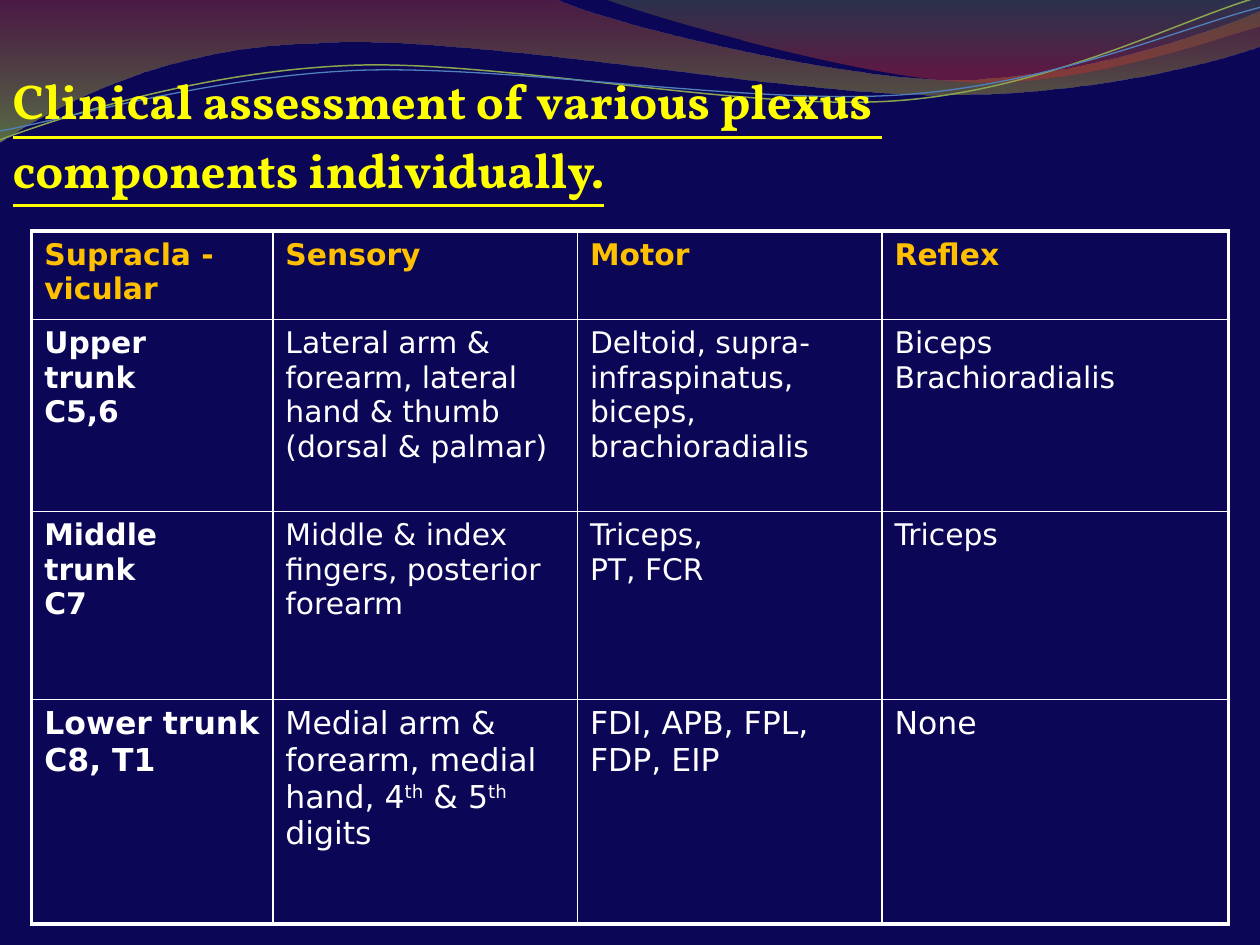
from dataclasses import dataclass

import pptx
import pptx.dml.color
import pptx.enum.text
import pptx.oxml
import pptx.oxml.ns
import pptx.util

Cm = pptx.util.Cm
Pt = pptx.util.Pt
RGB = pptx.dml.color.RGBColor.from_string
A_NS = pptx.oxml.ns.nsdecls("a")
qn = pptx.oxml.ns.qn


@dataclass(frozen=True)
class Theme:
    background: str = "0C0656"
    title: str = "FFFF00"
    header: str = "FFC000"
    body: str = "FFFFFF"
    border: str = "FFFFFF"
    title_font: str = "Vollkorn"
    table_font: str = "DejaVu Sans"
    title_size: float = 28
    title_gap: float = 5.6
    table_size: float = 17
    last_row_size: float = 18
    outer_border: float = 2.25
    inner_border: float = 1


@dataclass(frozen=True)
class GradientStop:
    position: int
    color: str
    opacity: int


@dataclass(frozen=True)
class Wave:
    """Points in cm; a segment of one point is straight, of three a cubic curve."""
    start: tuple
    segments: tuple
    stops: tuple = ()
    line_color: str = ""
    line_width: float = 0


THEME = Theme()

WAVES = (
    Wave((0, 0), (
        ((11.18, -0.03),),
        ((12.09, 0.43), (16.87, 1.6), (19.25, 1.6)),
        ((21.67, 1.6), (24.33, 0.66), (25.4, 0.23)),
        ((25.43, 0.91),),
        ((24.97, 1.12), (22.1, 1.93), (18.95, 1.91)),
        ((15.8, 1.91), (9.7, 0.71), (6.53, 0.86)),
        ((3.28, 0.91), (1.17, 2.11), (-0.03, 2.87)),
    ), stops=(GradientStop(0, "973330", 45), GradientStop(100, "95C238", 55))),
    Wave((12.17, -0.03), (
        ((12.93, 0.28), (17.32, 1.57), (19.53, 1.65)),
        ((21.74, 1.75), (24.41, 0.81), (25.4, 0.53)),
        ((25.4, 0),),
    ), stops=(GradientStop(0, "769537", 30), GradientStop(80, "BE3330", 45))),
    Wave((0, 2.82), (
        ((1.22, 2.36), (4.01, 1.45), (7.04, 1.32)),
        ((10.03, 1.19), (15.06, 2.26), (18.11, 2.03)),
        ((21.16, 1.8), (23.83, 0.38), (25.35, -0.05)),
    ), line_color="89A54F", line_width=0.85),
    Wave((0, 2.64), (
        ((1.19, 2.44), (4.17, 1.55), (7.19, 1.42)),
        ((10.24, 1.3), (15.16, 2.13), (18.21, 1.91)),
        ((21.23, 1.7), (23.9, 0.53), (25.4, 0.15)),
    ), line_color="4F81BD", line_width=0.75),
)

TITLE = "Clinical assessment of various plexus \ncomponents individually."

# A line feed starts a paragraph; text between carets is superscript
PLEXUS_ROWS = (
    ("Supracla -\nvicular", "Sensory", "Motor", "Reflex"),
    ("Upper\ntrunk\nC5,6",
     "Lateral arm & forearm, lateral hand & thumb (dorsal & palmar)",
     "Deltoid, supra-infraspinatus, biceps, brachioradialis",
     "Biceps\nBrachioradialis"),
    ("Middle\ntrunk\nC7", "Middle & index fingers, posterior forearm",
     "Triceps,\nPT, FCR", "Triceps"),
    ("Lower trunk\nC8, T1",
     "Medial arm & forearm, medial hand, 4^th^ & 5^th^ digits",
     "FDI, APB, FPL, FDP, EIP", "None"),
)
COLUMN_WIDTHS = (4.86, 6.14, 6.14, 6.98)
ROW_HEIGHTS = (1.78, 3.87, 3.79, 4.53)


def bend_segments(shape, segments: tuple) -> None:
    """Join the three points of each curved segment into one cubic curve."""
    lines = shape._element.spPr.iter(qn("a:lnTo"))
    remaining = iter(list(lines))
    for segment in segments:
        legs = [next(remaining) for _ in segment]
        if len(legs) == 3:
            curve = pptx.oxml.parse_xml(f"<a:cubicBezTo {A_NS}/>")
            legs[0].addprevious(curve)
            for leg in legs:
                curve.append(leg[0])
                leg.getparent().remove(leg)


def gradient_fill(stops: tuple):
    """A top-to-bottom gradient with a separate opacity at each stop."""
    stop_xml = "".join(
        f'<a:gs pos="{stop.position * 1000}"><a:srgbClr val="{stop.color}">'
        f'<a:alpha val="{stop.opacity * 1000}"/></a:srgbClr></a:gs>'
        for stop in stops)
    return pptx.oxml.parse_xml(
        f'<a:gradFill {A_NS} rotWithShape="1"><a:gsLst>{stop_xml}</a:gsLst>'
        '<a:lin ang="5400000" scaled="0"/></a:gradFill>')


def draw_wave(slide, wave: Wave) -> None:
    builder = slide.shapes.build_freeform(*map(Cm, wave.start))
    builder.add_line_segments(
        [(Cm(x), Cm(y)) for segment in wave.segments for x, y in segment],
        close=bool(wave.stops))
    shape = builder.convert_to_shape()
    bend_segments(shape, wave.segments)
    shape.shadow.inherit = False
    shape.fill.background()
    if wave.stops:
        shape.line.fill.background()
        no_fill = shape._element.spPr.find(qn("a:noFill"))
        no_fill.getparent().replace(no_fill, gradient_fill(wave.stops))
    else:
        shape.line.color.rgb = RGB(wave.line_color)
        shape.line.width = Pt(wave.line_width)


def format_run(run, font: str, size: float, color: str, bold: bool) -> None:
    run.font.name = font
    run.font.size = Pt(size)
    run.font.color.rgb = RGB(color)
    run.font.bold = bold


def place_title(slide) -> None:
    title = slide.shapes.title
    title.left, title.top, title.width, title.height = Cm(0), Cm(0), Cm(25.4), Cm(19.05)
    frame = title.text_frame
    frame.text = TITLE
    frame.word_wrap = True
    frame.auto_size = pptx.enum.text.MSO_AUTO_SIZE.NONE
    frame.vertical_anchor = pptx.enum.text.MSO_ANCHOR.TOP
    frame.margin_top = Cm(1.43)
    for paragraph in frame.paragraphs:
        paragraph.alignment = pptx.enum.text.PP_ALIGN.LEFT
        for run in paragraph.runs:
            format_run(run, THEME.title_font, THEME.title_size, THEME.title, True)
            run.font.underline = True
    frame.paragraphs[1].space_before = Pt(THEME.title_gap)
    # Bring the title in front of the waves
    slide.shapes._spTree.append(title._element)


def fill_cell(cell, text: str, size: float, color: str, bold: bool) -> None:
    plain, *marked = text.split("^")
    cell.text_frame.text = plain
    for index, part in enumerate(marked):
        run = cell.text_frame.paragraphs[0].add_run()
        run.text = part
        if index % 2 == 0:
            run._r.get_or_add_rPr().set("baseline", "30000")
    for paragraph in cell.text_frame.paragraphs:
        for run in paragraph.runs:
            format_run(run, THEME.table_font, size, color, bold)


def border_cell(cell, outer_sides: dict) -> None:
    for side, is_outer in outer_sides.items():
        width = Pt(THEME.outer_border if is_outer else THEME.inner_border)
        cell._tc.get_or_add_tcPr().append(pptx.oxml.parse_xml(
            f'<a:ln{side} {A_NS} w="{width}"><a:solidFill>'
            f'<a:srgbClr val="{THEME.border}"/></a:solidFill></a:ln{side}>'))
    cell.fill.background()


def draw_plexus_table(slide) -> None:
    last_row, last_column = len(ROW_HEIGHTS) - 1, len(COLUMN_WIDTHS) - 1
    plexus = slide.shapes.add_table(
        len(ROW_HEIGHTS), len(COLUMN_WIDTHS), Cm(0.64), Cm(4.66),
        Cm(sum(COLUMN_WIDTHS)), Cm(sum(ROW_HEIGHTS))).table
    plexus.horz_banding = False
    for column, width in zip(plexus.columns, COLUMN_WIDTHS):
        column.width = Cm(width)
    for r, (height, texts) in enumerate(zip(ROW_HEIGHTS, PLEXUS_ROWS)):
        plexus.rows[r].height = Cm(height)
        size = THEME.last_row_size if r == last_row else THEME.table_size
        color = THEME.header if r == 0 else THEME.body
        for c, text in enumerate(texts):
            cell = plexus.cell(r, c)
            fill_cell(cell, text, size, color, bold=r == 0 or c == 0)
            border_cell(cell, {"L": c == 0, "R": c == last_column,
                               "T": r == 0, "B": r == last_row})


def main() -> None:
    deck = pptx.Presentation()
    deck.slide_width, deck.slide_height = Cm(25.4), Cm(19.05)
    slide = deck.slides.add_slide(deck.slide_layouts[5])
    slide.background.fill.solid()
    slide.background.fill.fore_color.rgb = RGB(THEME.background)
    for wave in WAVES:
        draw_wave(slide, wave)
    place_title(slide)
    draw_plexus_table(slide)
    deck.save("out.pptx")


if __name__ == "__main__":
    main()
